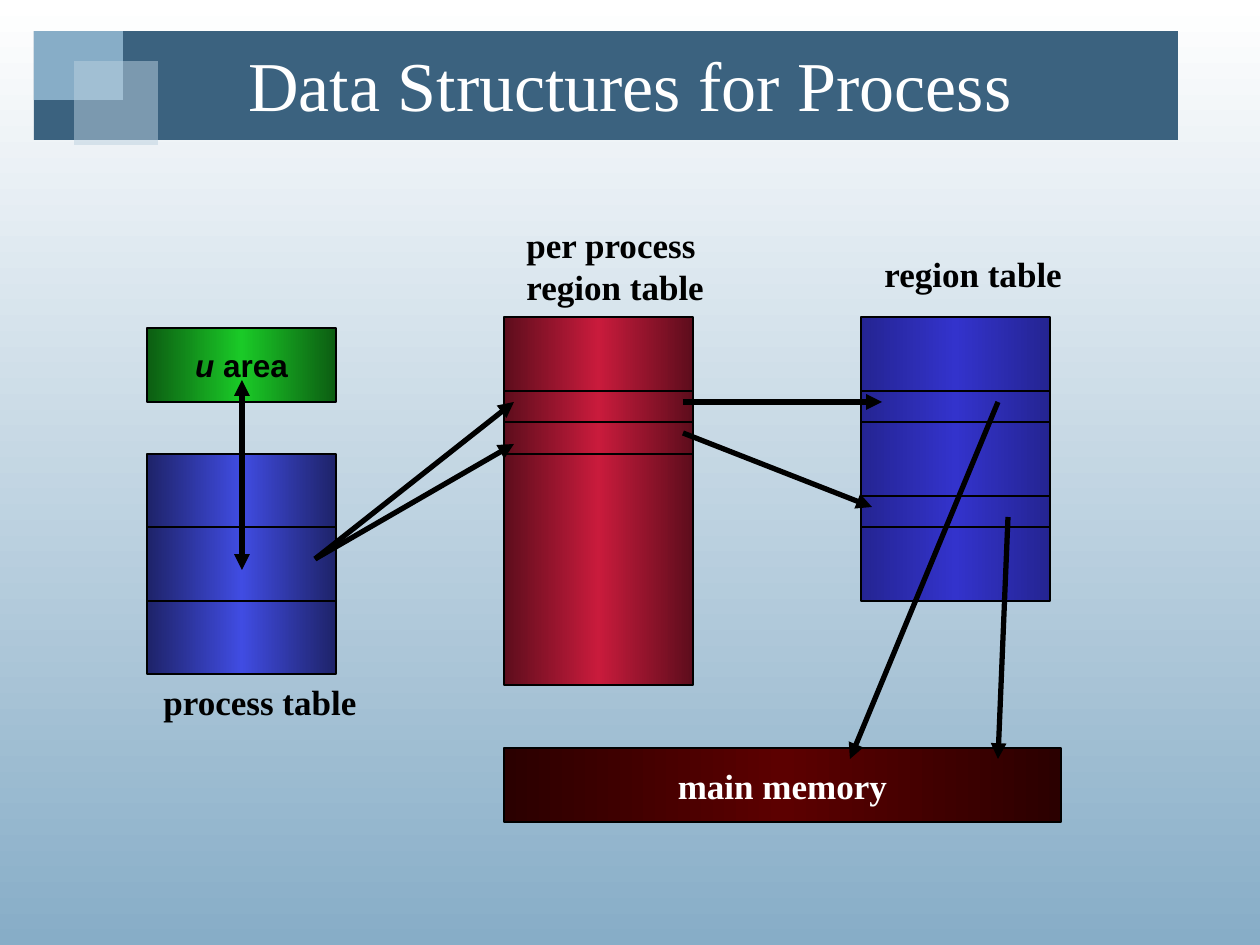
"""Build the slide on the data structures behind a process."""
from copy import deepcopy
from dataclasses import dataclass
from itertools import pairwise

from lxml.etree import SubElement
from pptx import Presentation
from pptx.dml.color import RGBColor
from pptx.enum.shapes import MSO_CONNECTOR as Connector
from pptx.enum.shapes import MSO_SHAPE as ShapeKind
from pptx.enum.text import MSO_ANCHOR as Anchor
from pptx.enum.text import MSO_AUTO_SIZE as AutoSize
from pptx.enum.text import PP_ALIGN as Align
from pptx.oxml.ns import qn
from pptx.util import Emu, Pt

PIXELS_PER_INCH = 126
COLUMN_WIDTH = 189
SERIF, SANS = "Times New Roman", "Arial"
COLORS = {
    "white": "FFFFFF", "black": "000000", "sky": "87ADC7", "banner": "3B627F", "mist": "BCD1E0",
    "green": "1ACA27", "green edge": "0C5D12",
    "process": "404CE2", "process edge": "1E2369",
    "crimson": "C91B3C", "crimson edge": "5D0D1C",
    "region": "3333CC", "region edge": "242492",
    "memory": "5C0000", "memory edge": "2B0000",
}


@dataclass(frozen=True)
class Box:
    left: int
    top: int
    width: int
    height: int


@dataclass(frozen=True)
class TableColumn:
    left: int
    edges: tuple[int, ...]
    color: str


@dataclass(frozen=True)
class Arrow:
    start: tuple[int, int]
    end: tuple[int, int]
    double: bool = False


@dataclass(frozen=True)
class Label:
    box: Box
    lines: tuple[str, ...]


BANNER = ((Box(34, 31, 1144, 109), "banner", 100),
          (Box(34, 31, 89, 69), "sky", 100),
          (Box(74, 61, 84, 84), "mist", 50))
TITLE_BOX = Box(42, 31, 1176, 105)
U_AREA_BOX = Box(147, 328, COLUMN_WIDTH, 74)
MEMORY_BOX = Box(504, 748, 557, 74)
COLUMNS = (
    TableColumn(147, (454, 527, 601, 674), "process"),
    TableColumn(504, (317, 391, 422, 454, 685), "crimson"),
    TableColumn(861, (317, 391, 422, 496, 527, 601), "region"),
)
ARROWS = (
    Arrow((242, 570), (242, 380), double=True),
    Arrow((315, 559), (514, 402)),
    Arrow((315, 559), (514, 444)),
    Arrow((683, 402), (882, 402)),
    Arrow((683, 433), (872, 507)),
    Arrow((998, 402), (850, 759)),
    Arrow((1008, 517), (998, 759)),
)
LABELS = (
    Label(Box(872, 246, 204, 55), ("region table",)),
    Label(Box(514, 217, 204, 97), ("per process", "region table")),
    Label(Box(151, 674, 219, 55), ("process table",)),
)


def px(length: int) -> Emu:
    return Emu(round(length * 914400 / PIXELS_PER_INCH))


def rgb(name: str) -> RGBColor:
    return RGBColor.from_string(COLORS[name])


def place(box: Box) -> tuple[Emu, ...]:
    return px(box.left), px(box.top), px(box.width), px(box.height)


def add_run(paragraph, text: str, size: int, color: str, font: str = SERIF,
            bold: bool = True, italic: bool = False) -> None:
    run = paragraph.add_run()
    run.text = text
    run.font.name, run.font.size = font, Pt(size)
    run.font.bold, run.font.italic = bold, italic
    run.font.color.rgb = rgb(color)


def add_rectangle(slide, box: Box):
    shape = slide.shapes.add_shape(ShapeKind.RECTANGLE, *place(box))
    shape.shadow.inherit = False
    return shape


def add_banner_block(slide, box: Box, color: str, opacity: int) -> None:
    shape = add_rectangle(slide, box)
    shape.fill.solid()
    shape.fill.fore_color.rgb = rgb(color)
    shape.line.fill.background()
    if opacity < 100:
        fill_color = shape._element.spPr.find(qn("a:solidFill"))[0]
        SubElement(fill_color, qn("a:alpha")).set("val", str(opacity * 1000))


def add_cell(slide, box: Box, color: str):
    shape = add_rectangle(slide, box)
    shape.fill.gradient()
    shape.fill.gradient_angle = 0
    stop_list = shape._element.spPr.find(f"{qn('a:gradFill')}/{qn('a:gsLst')}")
    stop_list.append(deepcopy(stop_list[0]))
    edge = f"{color} edge"
    for stop, name, position in zip(shape.fill.gradient_stops, (edge, color, edge), (0, 0.5, 1)):
        stop.color.rgb = rgb(name)
        stop.position = position
    shape.line.color.rgb = rgb("black")
    shape.line.width = Pt(0.75)
    return shape


def centered_paragraph(shape):
    frame = shape.text_frame
    frame.word_wrap = False
    frame.vertical_anchor = Anchor.MIDDLE
    paragraph = frame.paragraphs[0]
    paragraph.alignment = Align.CENTER
    return paragraph


def add_arrow(slide, arrow: Arrow) -> None:
    connector = slide.shapes.add_connector(
        Connector.STRAIGHT, *map(px, (*arrow.start, *arrow.end)))
    connector.line.color.rgb = rgb("black")
    connector.line.width = Pt(3)
    line = connector.line._get_or_add_ln()
    for end in ("headEnd", "tailEnd") if arrow.double else ("tailEnd",):
        SubElement(line, qn(f"a:{end}")).set("type", "triangle")
    SubElement(connector._element.spPr, qn("a:effectLst"))


def add_label(slide, label: Label) -> None:
    frame = slide.shapes.add_textbox(*place(label.box)).text_frame
    frame.word_wrap = False
    frame.auto_size = AutoSize.SHAPE_TO_FIT_TEXT
    for index, text in enumerate(label.lines):
        paragraph = frame.add_paragraph() if index else frame.paragraphs[0]
        add_run(paragraph, text, 20, "black")


def add_title(slide) -> None:
    title = slide.shapes.title
    slide.shapes._spTree.append(title._element)
    title.left, title.top, title.width, title.height = place(TITLE_BOX)
    paragraph = centered_paragraph(title)
    title.text_frame.word_wrap = True
    add_run(paragraph, "Data Structures for Process", 40, "white", bold=False)


def main() -> None:
    presentation = Presentation()
    presentation.slide_width, presentation.slide_height = px(1260), px(945)
    slide = presentation.slides.add_slide(presentation.slide_layouts[5])
    background = slide.background.fill
    background.gradient()
    background.gradient_angle = 270
    for stop, name in zip(background.gradient_stops, ("white", "sky")):
        stop.color.rgb = rgb(name)

    for box, color, opacity in BANNER:
        add_banner_block(slide, box, color, opacity)
    add_title(slide)
    u_area = centered_paragraph(add_cell(slide, U_AREA_BOX, "green"))
    add_run(u_area, "u", 18, "black", SANS, italic=True)
    add_run(u_area, " area", 18, "black", SANS)
    for column in COLUMNS:
        for top, bottom in pairwise(column.edges):
            add_cell(slide, Box(column.left, top, COLUMN_WIDTH, bottom - top), column.color)
    memory = centered_paragraph(add_cell(slide, MEMORY_BOX, "memory"))
    add_run(memory, "main memory", 20, "white")
    for arrow in ARROWS:
        add_arrow(slide, arrow)
    for label in LABELS:
        add_label(slide, label)
    presentation.save("out.pptx")


if __name__ == "__main__":
    main()
